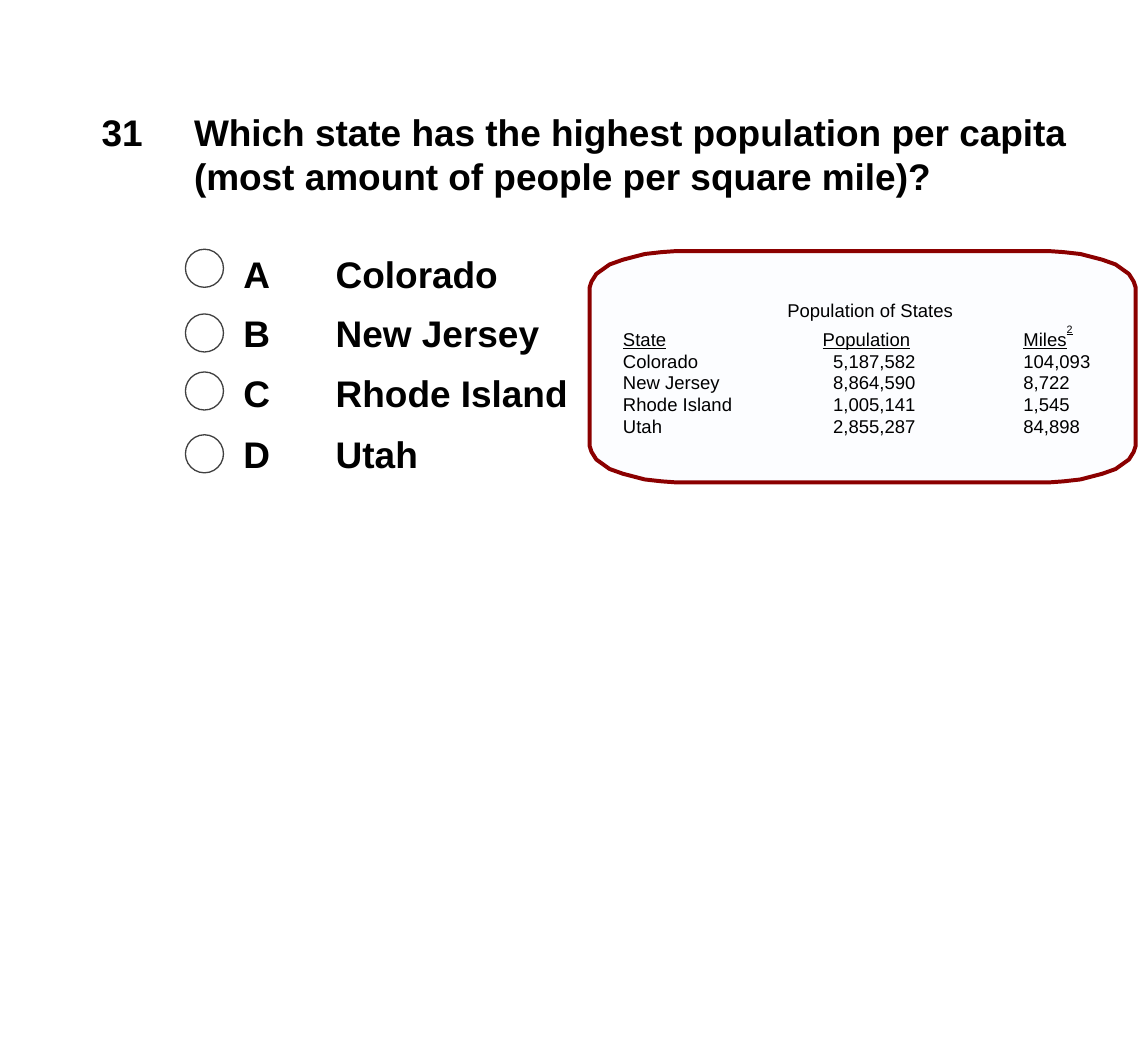
import pptx
import pptx.util
import pptx.dml.color
import pptx.enum.shapes
import pptx.enum.text

Inches = pptx.util.Inches
Pt = pptx.util.Pt
COLORS = {
    "text": "000000",
    "panel": "FCFDFF",
    "border": "8B0000",
    "button": "FFFFFF",
    "outline": "404040",
}
NO_STYLE_NO_GRID = "{2D5ABB26-0587-4C30-8999-92F81FD0307C}"


def color(name):
    return pptx.dml.color.RGBColor.from_string(COLORS[name])


def write(text_frame, text, size, bold=False):
    text_frame.text = text
    text_frame.word_wrap = True
    text_frame.auto_size = pptx.enum.text.MSO_AUTO_SIZE.NONE
    text_frame.vertical_anchor = pptx.enum.text.MSO_ANCHOR.TOP
    text_frame.margin_left = text_frame.margin_right = Inches(0.11)
    text_frame.margin_top = text_frame.margin_bottom = Inches(0.05)
    paragraph = text_frame.paragraphs[0]
    paragraph.alignment = pptx.enum.text.PP_ALIGN.LEFT
    for run in paragraph.runs:
        run.font.name = "Arial"
        run.font.size = Pt(size)
        run.font.bold = bold
        run.font.color.rgb = color("text")
    return paragraph


presentation = pptx.Presentation()
presentation.slide_width = Inches(12.07)
presentation.slide_height = Inches(11.11)
slide = presentation.slides.add_slide(presentation.slide_layouts[5])

question = slide.shapes.title
question.left, question.top = Inches(1.93), Inches(1.1)
question.width, question.height = Inches(10), Inches(1.05)
write(question.text_frame,
      "Which state has the highest population per capita (most amount of people per square mile)?",
      28, True)

number = slide.shapes.add_textbox(Inches(0.96), Inches(1.1), Inches(0.9), Inches(0.58))
write(number.text_frame, "31", 28, True)

options = [
    ("A", "Colorado", 2.59, 2.62),
    ("B", "New Jersey", 3.21, 3.3),
    ("C", "Rhode Island", 3.85, 3.91),
    ("D", "Utah", 4.49, 4.57),
]
for letter, state, text_top, button_top in options:
    for text, left, width in [(letter, 2.45, 0.9), (state, 3.42, 2.75)]:
        box = slide.shapes.add_textbox(Inches(left), Inches(text_top), Inches(width), Inches(0.58))
        write(box.text_frame, text, 28, True)
    button = slide.shapes.add_shape(pptx.enum.shapes.MSO_SHAPE.OVAL,
                                    Inches(1.95), Inches(button_top), Inches(0.4), Inches(0.4))
    button.shadow.inherit = False
    button.fill.solid()
    button.fill.fore_color.rgb = color("button")
    button.line.color.rgb = color("outline")
    button.line.width = Pt(1)

left, top, right, bottom = 6.2, 2.64, 11.94, 5.07
corner = [(0, 0.38), (0.02, 0.32), (0.07, 0.24), (0.21, 0.14),
          (0.35, 0.09), (0.58, 0.03), (0.76, 0.01), (0.9, 0)]
outline = [(left + x, top + y) for x, y in corner]
outline += [(right - x, top + y) for x, y in reversed(corner)]
outline += [(right - x, bottom - y) for x, y in corner]
outline += [(left + x, bottom - y) for x, y in reversed(corner)]
points = [(Inches(x), Inches(y)) for x, y in outline]
builder = slide.shapes.build_freeform(*points[0])
builder.add_line_segments(points[1:], close=True)
panel = builder.convert_to_shape()
panel.shadow.inherit = False
panel.fill.solid()
panel.fill.fore_color.rgb = color("panel")
panel.line.color.rgb = color("border")
panel.line.width = Pt(3)

rows = [
    ("Population of States", "", ""),
    ("State", "Population", "Miles"),
    ("Colorado", "5,187,582", "104,093"),
    ("New Jersey", "8,864,590", "8,722"),
    ("Rhode Island", "1,005,141", "1,545"),
    ("Utah", "2,855,287", "84,898"),
]
column_widths = [2.1, 2.11, 0.99]
row_heights = [0.23, 0.3] + [0.23] * 4
frame = slide.shapes.add_table(len(rows), len(column_widths), Inches(6.55), Inches(3.15),
                               Inches(sum(column_widths)), Inches(sum(row_heights)))
table = frame.table
table.first_row = False
table.horz_banding = False
table._tbl.tblPr.find(pptx.oxml.ns.qn("a:tableStyleId")).text = NO_STYLE_NO_GRID
for column, width in zip(table.columns, column_widths):
    column.width = Inches(width)
for row, height in zip(table.rows, row_heights):
    row.height = Inches(height)

for row_index, row in enumerate(rows):
    for column_index, text in enumerate(row):
        cell = table.cell(row_index, column_index)
        paragraph = write(cell.text_frame, text, 14)
        paragraph.font.size = Pt(14)
        cell.fill.background()
        cell.margin_left = Inches(0.11 if column_index == 1 and row_index > 1 else 0)
        cell.margin_right = cell.margin_top = cell.margin_bottom = 0
        cell.vertical_anchor = pptx.enum.text.MSO_ANCHOR.BOTTOM
        if row_index == 1:
            paragraph.runs[0].font.underline = True

table.cell(0, 0).merge(table.cell(0, 2))
table.cell(0, 0).text_frame.paragraphs[0].alignment = pptx.enum.text.PP_ALIGN.CENTER

exponent = table.cell(1, 2).text_frame.paragraphs[0].add_run()
exponent.text = "2"
exponent.font.name = "Arial"
exponent.font.size = Pt(14)
exponent.font.underline = True
exponent.font.color.rgb = color("text")
exponent.font._element.set("baseline", "70000")

presentation.save("out.pptx")
